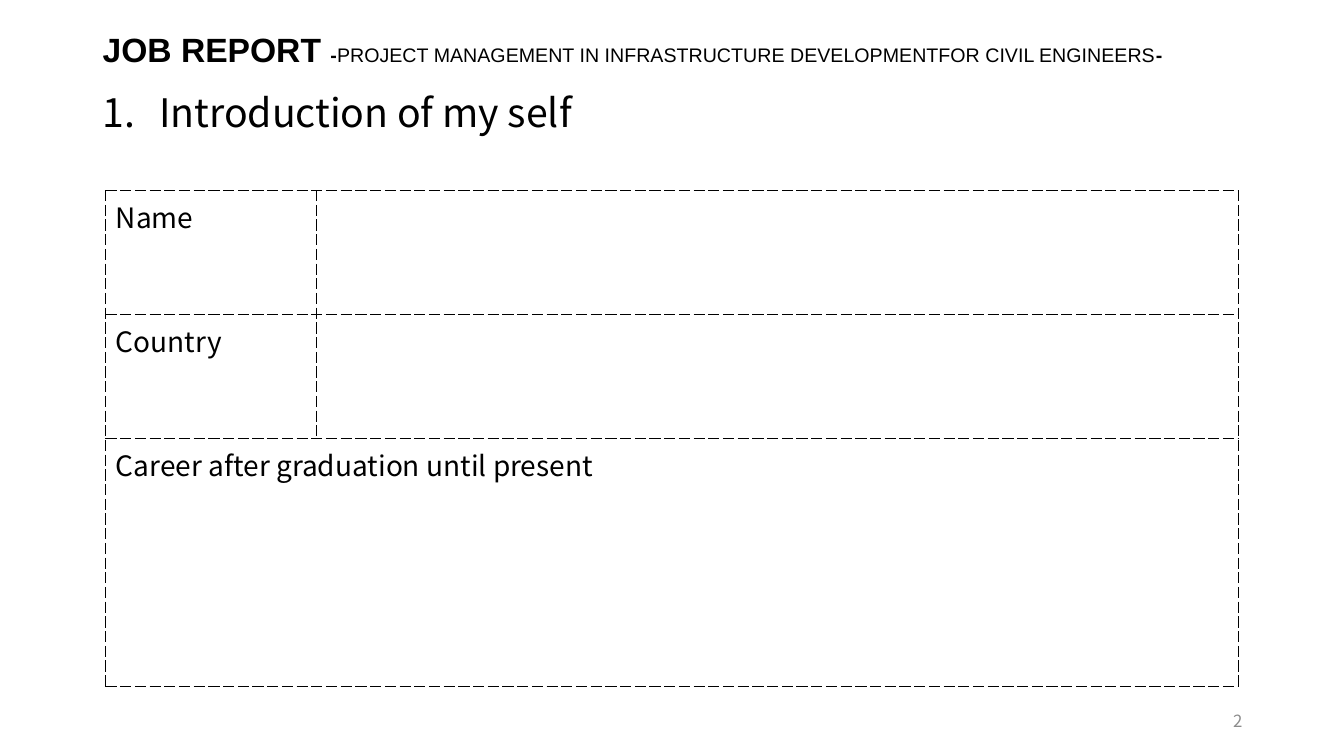
from dataclasses import dataclass

from lxml import etree
from pptx import Presentation
from pptx.dml.color import RGBColor
from pptx.enum.text import MSO_ANCHOR, PP_ALIGN
from pptx.oxml.ns import qn
from pptx.util import Inches, Pt

TOP, MIDDLE = MSO_ANCHOR.TOP, MSO_ANCHOR.MIDDLE
LEFT, RIGHT = PP_ALIGN.LEFT, PP_ALIGN.RIGHT


@dataclass(frozen=True)
class Theme:
    heading_font: str = "Arial"
    body_font: str = "Noto Sans CJK JP"
    ink: str = "000000"
    muted: str = "8C8C8C"
    title_size: int = 24
    subtitle_size: int = 14
    section_size: int = 28
    cell_size: int = 20
    number_size: int = 12
    border_width: float = 0.75
    border_dash: str = "sysDash"


class ReportPage:
    def __init__(self, deck, theme):
        self.theme = theme
        self.page = deck.slides.add_slide(deck.slide_layouts[6])

    def style(self, font, size, name=None, color=None):
        font.name = name or self.theme.body_font
        font.size = Pt(size)
        font.color.rgb = RGBColor.from_string(color or self.theme.ink)

    def text_box(self, left, top, width, height, anchor=TOP, align=LEFT):
        """Add a wrapping text box and return its first paragraph."""
        box = self.page.shapes.add_textbox(
            Inches(left), Inches(top), Inches(width), Inches(height))
        frame = box.text_frame
        frame.word_wrap = True
        frame.vertical_anchor = anchor
        para = frame.paragraphs[0]
        para.alignment = align
        return para

    def title(self, spans):
        """Write the title from (text, size, bold) spans."""
        para = self.text_box(0.92, 0.27, 11.5, 0.48, anchor=MIDDLE)
        para.line_spacing = 0.9
        for text, size, bold in spans:
            span = para.add_run()
            span.text = text
            self.style(span.font, size, self.theme.heading_font)
            span.font.bold = bold

    def numbered_heading(self, text):
        para = self.text_box(0.92, 0.92, 11.5, 0.48)
        para.text = text
        para.line_spacing = 0.8
        para.space_before = Pt(10)
        self.style(para.font, self.theme.section_size)
        properties = para._p.get_or_add_pPr()
        properties.set("marL", str(Inches(0.56)))
        properties.set("indent", str(Inches(-0.56)))
        number = etree.Element(qn("a:buAutoNum"), type="arabicPeriod")
        properties.find(qn("a:defRPr")).addprevious(number)

    def page_number(self, text):
        para = self.text_box(9.42, 6.95, 3, 0.4, anchor=MIDDLE, align=RIGHT)
        para.text = text
        self.style(para.font, self.theme.number_size, color=self.theme.muted)

    def dash_borders(self, cell):
        properties = cell._tc.get_or_add_tcPr()
        for position, side in enumerate(("a:lnL", "a:lnR", "a:lnT", "a:lnB")):
            line = etree.Element(qn(side), w=str(Pt(self.theme.border_width)))
            fill = etree.SubElement(line, qn("a:solidFill"))
            etree.SubElement(fill, qn("a:srgbClr"), val=self.theme.ink)
            etree.SubElement(line, qn("a:prstDash"), val=self.theme.border_dash)
            properties.insert(position, line)

    def form_table(self, labels, widths, heights):
        """Add a form with a label per row; the last row spans all columns."""
        table = self.page.shapes.add_table(
            len(heights), len(widths), Inches(1.05), Inches(1.89),
            Inches(sum(widths)), Inches(sum(heights))).table
        table.first_row = table.horz_banding = False
        for column, width in zip(table.columns, widths):
            column.width = Inches(width)
        for row, height, label in zip(table.rows, heights, labels):
            row.height = Inches(height)
            row.cells[0].text = label
            for cell in row.cells:
                cell.fill.background()
                self.style(cell.text_frame.paragraphs[0].font, self.theme.cell_size)
                self.dash_borders(cell)
        last = len(heights) - 1
        table.cell(last, 0).merge(table.cell(last, len(widths) - 1))


def main():
    deck = Presentation()
    deck.slide_width, deck.slide_height = Inches(13.33), Inches(7.5)
    theme = Theme()
    report = ReportPage(deck, theme)
    report.title([
        ("JOB REPORT ", theme.title_size, True),
        ("-", theme.subtitle_size, True),
        ("PROJECT MANAGEMENT IN INFRASTRUCTURE DEVELOPMENTFOR CIVIL ENGINEERS",
         theme.subtitle_size, False),
        ("-", theme.subtitle_size, True),
    ])
    report.numbered_heading("Introduction of my self")
    report.page_number("2")
    report.form_table(
        ["Name", "Country", "Career after graduation until present"],
        widths=[2.09, 9.14], heights=[1.23, 1.23, 2.46])
    deck.save("out.pptx")


if __name__ == "__main__":
    main()
